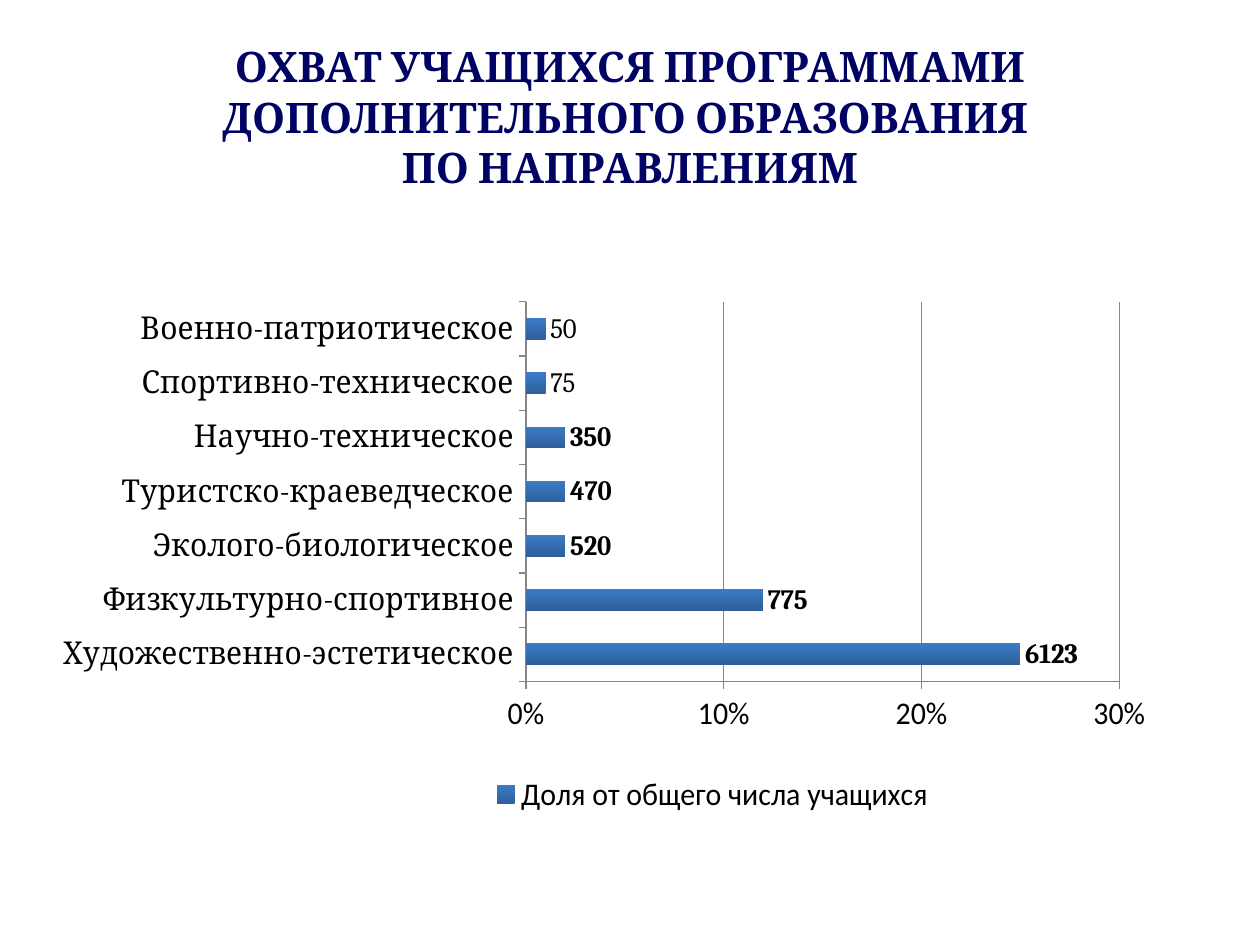
from lxml import etree
from pptx import Presentation
from pptx import util as u
from pptx.chart.data import CategoryChartData
from pptx.dml.color import RGBColor
from pptx.enum import chart as ch, text
from pptx.oxml.ns import qn

COLORS = {"title": "000264", "text": "000000", "axis": "868686",
          "bar_top": "3C7BC7", "bar_bottom": "2E5F9A"}

TITLE = "ОХВАТ УЧАЩИХСЯ ПРОГРАММАМИ ДОПОЛНИТЕЛЬНОГО ОБРАЗОВАНИЯ \vПО НАПРАВЛЕНИЯМ"
SERIES = "Доля от общего числа учащихся"
# direction, share of all pupils, number of pupils, bold label
ROWS = [
    ("Художественно-эстетическое", 0.25, "6123", True),
    ("Физкультурно-спортивное", 0.12, "775", True),
    ("Эколого-биологическое", 0.02, "520", True),
    ("Туристско-краеведческое", 0.02, "470", True),
    ("Научно-техническое", 0.02, "350", True),
    ("Спортивно-техническое", 0.01, "75", False),
    ("Военно-патриотическое", 0.01, "50", False),
]


def rgb(name):
    return RGBColor.from_string(COLORS[name])


def manual_layout(x, y, w, h, inner=False):
    """Chart part layout, in fractions of the chart's size."""
    layout = etree.Element(qn("c:layout"))
    manual = etree.SubElement(layout, qn("c:manualLayout"))
    settings = [("xMode", "edge"), ("yMode", "edge"),
                ("x", x), ("y", y), ("w", w), ("h", h)]
    if inner:
        settings.insert(0, ("layoutTarget", "inner"))
    for tag, val in settings:
        etree.SubElement(manual, qn("c:" + tag)).set("val", str(val))
    return layout


class SlideBuilder:
    serif, sans = "Cambria", "Calibri"

    def __init__(self, slide):
        self.s = slide

    def style(self, font, name, size, color="text", bold=False):
        font.name, font.size, font.bold = name, u.Pt(size), bold
        font.color.rgb = rgb(color)

    def title(self, content, x, y, w, h):
        tf = self.s.shapes.add_textbox(u.Cm(x), u.Cm(y), u.Cm(w), u.Cm(h)).text_frame
        tf.word_wrap = True
        tf.vertical_anchor = text.MSO_ANCHOR.MIDDLE
        p = tf.paragraphs[0]
        p.text = content
        p.alignment = text.PP_ALIGN.CENTER
        self.style(p.font, self.serif, 24, "title", True)

    def axis(self, axis, font_name):
        axis.major_tick_mark = ch.XL_TICK_MARK.OUTSIDE
        axis.minor_tick_mark = ch.XL_TICK_MARK.NONE
        axis.format.line.color.rgb = rgb("axis")
        axis.format.line.width = u.Pt(0.75)
        self.style(axis.tick_labels.font, font_name, 18)

    def bar_chart(self, x, y, w, h):
        data = CategoryChartData(number_format="0%")
        data.categories = [row[0] for row in ROWS]
        data.add_series(SERIES, [row[1] for row in ROWS])
        chart = self.s.shapes.add_chart(
            ch.XL_CHART_TYPE.BAR_CLUSTERED,
            u.Cm(x), u.Cm(y), u.Cm(w), u.Cm(h), data).chart
        chart.has_title = False
        self.style(chart.font, self.sans, 18)

        self.axis(chart.category_axis, self.serif)
        values = chart.value_axis
        self.axis(values, self.sans)
        values.minimum_scale, values.maximum_scale, values.major_unit = 0, 0.3, 0.1
        values.tick_labels.number_format = "0%"
        values.tick_labels.number_format_is_linked = False
        values.has_major_gridlines = True
        grid = values.major_gridlines.format.line
        grid.color.rgb, grid.width = rgb("axis"), u.Pt(0.75)

        plot = chart.plots[0]
        plot.gap_width, plot.vary_by_categories = 150, False
        self.bars(plot.series[0])
        self.legend(chart)

        area = chart._chartSpace.chart.plotArea
        for old in area.findall(qn("c:layout")):
            area.remove(old)
        area.insert(0, manual_layout(0.377, 0.13, 0.551, 0.609, inner=True))

    def bars(self, series):
        fill = series.format.fill
        fill.gradient()
        fill.gradient_angle = 90
        for stop, name in zip(fill.gradient_stops, ("bar_bottom", "bar_top")):
            stop.color.rgb = rgb(name)
        labels = series.data_labels
        labels.show_value = True
        labels.number_format, labels.number_format_is_linked = "0%", False
        self.style(labels.font, self.serif, 16, bold=True)
        for i, (_, _, pupils, bold) in enumerate(ROWS):
            label = series.points[i].data_label
            p = label.text_frame.paragraphs[0]
            r = p.add_run()
            r.text = pupils
            self.style(r.font, self.serif, 16, bold=bold)
            label.position = ch.XL_LABEL_POSITION.OUTSIDE_END

    def legend(self, chart):
        chart.has_legend = True
        legend = chart.legend
        legend.position = ch.XL_LEGEND_POSITION.RIGHT
        legend.include_in_layout = False
        self.style(legend.font, self.sans, 18)
        for old in legend._element.findall(qn("c:layout")):
            legend._element.remove(old)
        legend._element.find(qn("c:legendPos")).addnext(
            manual_layout(0.34, 0.88, 0.42, 0.08))


def main():
    prs = Presentation()
    prs.slide_width, prs.slide_height = u.Cm(25.4), u.Cm(19.05)
    b = SlideBuilder(prs.slides.add_slide(prs.slide_layouts[6]))
    b.bar_chart(1.27, 4.45, 22.86, 12.57)
    b.title(TITLE, 1.27, 0.76, 22.86, 3.18)
    prs.save("out.pptx")


if __name__ == "__main__":
    main()
